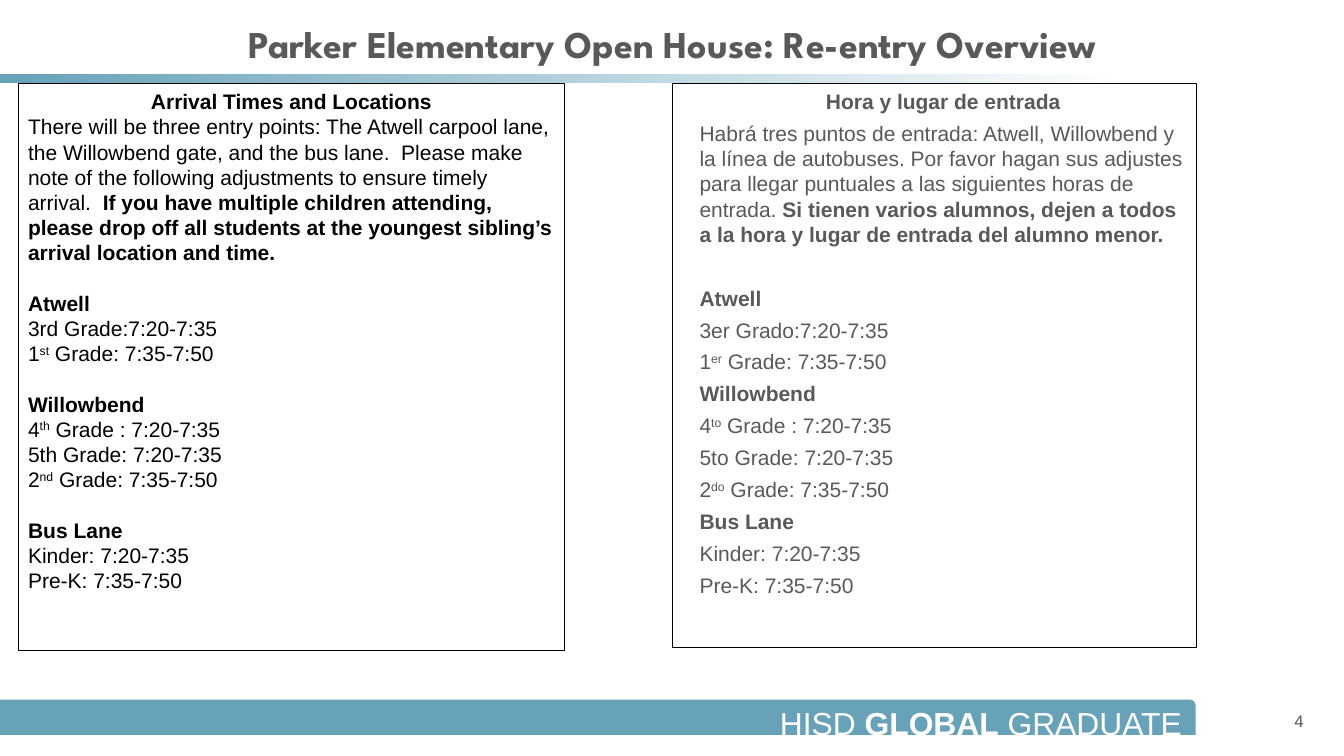
from pptx import Presentation
from pptx.dml.color import RGBColor
from pptx.enum.shapes import MSO_SHAPE
from pptx.enum.text import MSO_ANCHOR, PP_ALIGN
from pptx.util import Inches, Pt

COLORS = {"teal": "67A2B9", "white": "FFFFFF", "slate": "58595B",
          "gray": "595959", "black": "000000"}

TITLE = "Parker Elementary Open House: Re-entry Overview"
PAGE_NUMBER = "4"
FOOTER = [("HISD ", ""), ("GLOBAL", "bold"), (" GRADUATE", "")]


def grade(number, suffix, rest):
    return [(number, ""), (suffix, "super"), (rest, "")]


def plain(text):
    return [(text, "")]


def heading(text):
    return [(text, "bold")]


ENGLISH = [
    heading("Arrival Times and Locations"),
    [("There will be three entry points: The Atwell carpool lane, the Willowbend gate, "
      "and the bus lane.\u00a0 Please make note of the following adjustments to ensure "
      "timely arrival. ", ""),
     ("\u00a0If you have multiple children attending, please drop off all students at the "
      "youngest sibling’s arrival location and time.", "bold")],
    heading("Atwell"),
    plain("3rd Grade:7:20-7:35"),
    grade("1", "st", " Grade: 7:35-7:50"),
    heading("Willowbend"),
    grade("4", "th", " Grade : 7:20-7:35"),
    plain("5th Grade: 7:20-7:35"),
    grade("2", "nd", " Grade: 7:35-7:50"),
    heading("Bus Lane"),
    plain("Kinder: 7:20-7:35"),
    plain("Pre-K: 7:35-7:50"),
]
SPANISH = [
    heading("Hora y lugar de entrada"),
    [("Habrá tres puntos de entrada: Atwell, Willowbend y la línea de autobuses. Por favor "
      "hagan sus adjustes para llegar puntuales a las siguientes horas de entrada. ", ""),
     ("Si tienen varios alumnos, dejen a todos a la hora y lugar de entrada del alumno "
      "menor.", "bold")],
    heading("Atwell"),
    plain("3er Grado:7:20-7:35"),
    grade("1", "er", " Grade: 7:35-7:50"),
    heading("Willowbend"),
    grade("4", "to", " Grade : 7:20-7:35"),
    plain("5to Grade: 7:20-7:35"),
    grade("2", "do", " Grade: 7:35-7:50"),
    heading("Bus Lane"),
    plain("Kinder: 7:20-7:35"),
    plain("Pre-K: 7:35-7:50"),
]
# Paragraph space in points, with wider gaps above the listed entry points
PANELS = [
    {"at": (0.18, 0.83, 5.42, 5.62), "lines": ENGLISH, "color": "black",
     "indent": 0, "space": 0, "gap": 18, "gap_above": ("Atwell", "Willowbend", "Bus Lane")},
    {"at": (6.67, 0.83, 5.2, 5.59), "lines": SPANISH, "color": "gray",
     "indent": 0.17, "space": 4.8, "gap": 27.6, "gap_above": ("Atwell",)},
]


def rgb(name):
    return RGBColor.from_string(COLORS[name])


def inches(at):
    return [Inches(value) for value in at]


def add_block(page, kind, at):
    block = page.shapes.add_shape(kind, *inches(at))
    block.shadow.inherit = False
    block.line.fill.background()
    return block


def set_margins(frame, side, top):
    frame.margin_left = frame.margin_right = Inches(side)
    frame.margin_top = frame.margin_bottom = Inches(top)
    frame.word_wrap = True


def write_spans(para, spans, size, color, font="Arial"):
    for text, style in spans:
        span = para.add_run()
        span.text = text
        span.font.name = font
        span.font.size = Pt(size)
        span.font.bold = style == "bold"
        span.font.color.rgb = rgb(color)
        if style == "super":
            span.font._element.set("baseline", "30000")


def add_label(page, at, spans, size, color, margins, anchor):
    """Add a one-line text box aligned right."""
    frame = page.shapes.add_textbox(*inches(at)).text_frame
    set_margins(frame, *margins)
    frame.vertical_anchor = anchor
    para = frame.paragraphs[0]
    para.alignment = PP_ALIGN.RIGHT
    write_spans(para, spans, size, color)


def add_panel(page, panel):
    box = add_block(page, MSO_SHAPE.RECTANGLE, panel["at"])
    box.fill.background()
    box.line.color.rgb = rgb("black")
    box.line.width = Pt(0.75)
    frame = box.text_frame
    set_margins(frame, 0.1, 0.05)
    frame.vertical_anchor = MSO_ANCHOR.TOP
    for index, spans in enumerate(panel["lines"]):
        para = frame.add_paragraph() if index else frame.paragraphs[0]
        para.alignment = PP_ALIGN.LEFT if index else PP_ALIGN.CENTER
        para._p.get_or_add_pPr().set("marL", str(Inches(panel["indent"])))
        if index:
            has_gap = spans[0][0] in panel["gap_above"]
            para.space_before = Pt(panel["gap"] if has_gap else panel["space"])
        write_spans(para, spans, 15, panel["color"])


def main():
    deck = Presentation()
    deck.slide_width, deck.slide_height = Inches(13.33), Inches(7.5)
    page = deck.slides.add_slide(deck.slide_layouts[5])

    title = page.shapes.title
    title.left, title.top, title.width, title.height = inches((0.67, 0.16, 12, 0.57))
    set_margins(title.text_frame, 0.1, 0.05)
    title.text_frame.vertical_anchor = MSO_ANCHOR.TOP
    para = title.text_frame.paragraphs[0]
    para.alignment = PP_ALIGN.CENTER
    write_spans(para, heading(TITLE), 27, "slate", "League Spartan")

    rule = add_block(page, MSO_SHAPE.RECTANGLE, (0, 0.73, 11.23, 0.09))
    rule.fill.gradient()
    rule.fill.gradient_angle = 0
    for stop, color in zip(rule.fill.gradient_stops, ("teal", "white")):
        stop.color.rgb = rgb(color)

    band = add_block(page, MSO_SHAPE.ROUND_1_RECTANGLE, (0, 6.94, 11.86, 0.35))
    band.fill.solid()
    band.fill.fore_color.rgb = rgb("teal")

    add_label(page, (5.01, 6.91, 6.84, 0.39), FOOTER, 22.7, "white",
              (0.13, 0.07), MSO_ANCHOR.TOP)
    add_label(page, (12.16, 6.95, 0.87, 0.4), plain(PAGE_NUMBER), 12, "slate",
              (0.1, 0.05), MSO_ANCHOR.MIDDLE)
    for panel in PANELS:
        add_panel(page, panel)
    deck.save("out.pptx")


if __name__ == "__main__":
    main()
